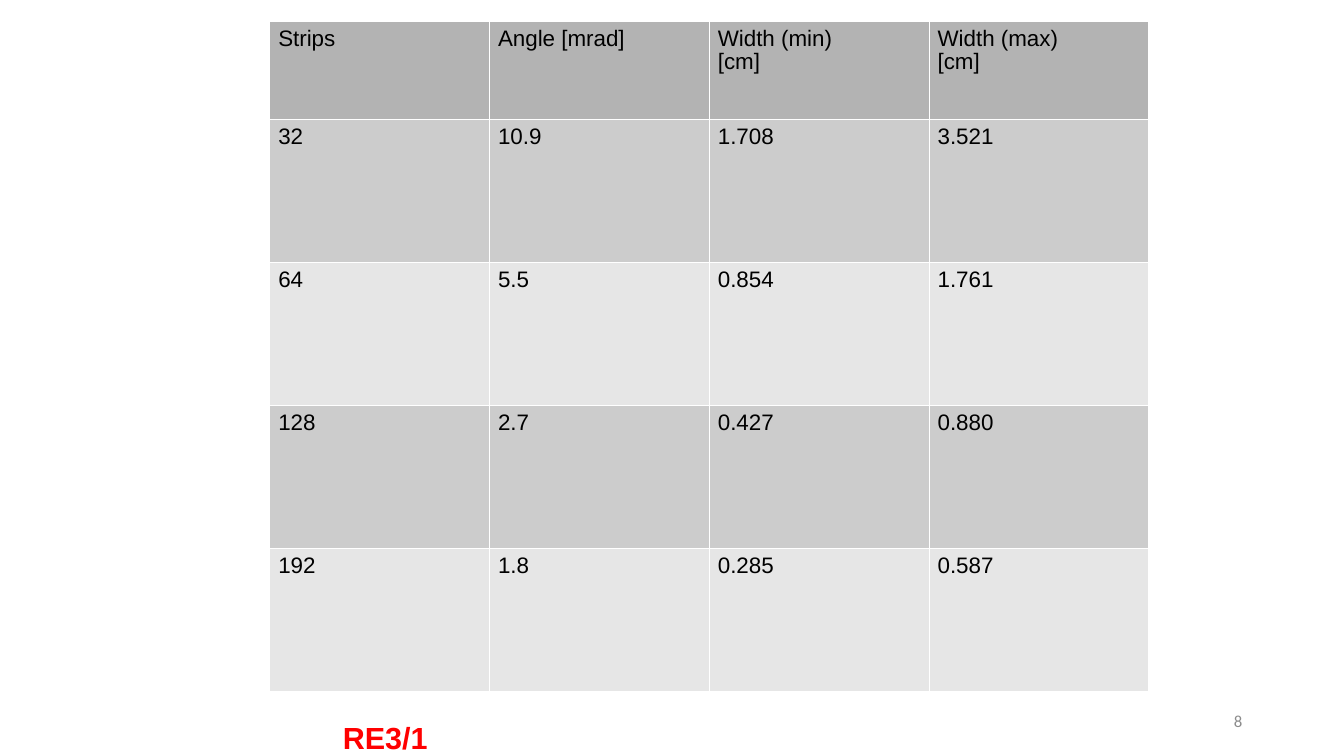
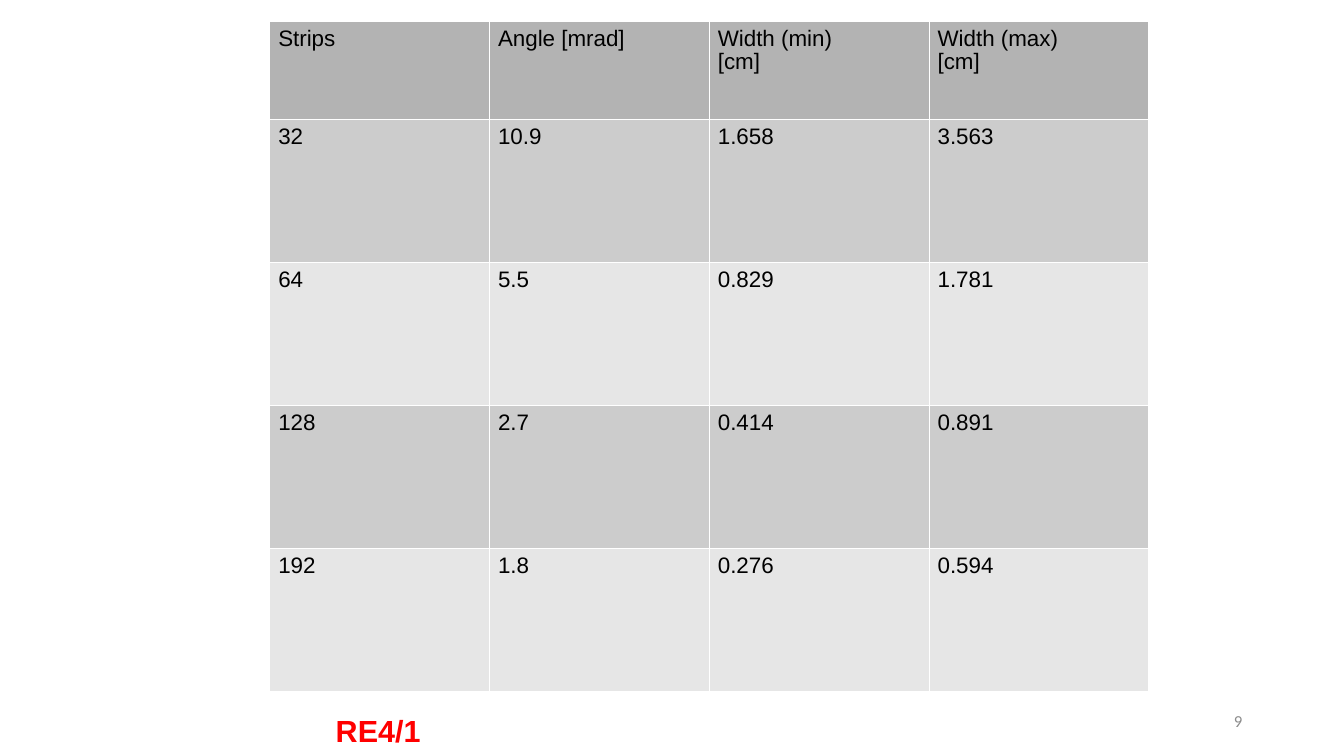
from dataclasses import dataclass

from lxml.etree import SubElement
from pptx import Presentation
from pptx.dml.color import RGBColor
from pptx.enum.text import MSO_ANCHOR, PP_ALIGN
from pptx.oxml.ns import qn
from pptx.util import Inches, Pt


@dataclass(frozen=True)
class Theme:
    sans: str = "Arial"
    foot: str = "Calibri"
    ink: str = "000000"
    red: str = "FF0000"
    grey: str = "8C8C8C"
    head: str = "B3B3B3"
    bands: tuple = ("CCCCCC", "E6E6E6")
    rule: str = "FFFFFF"
    line: float = 0.06
    body: float = 16
    label: float = 21.8
    small: float = 12
    space: float = 0.89


THEME = Theme()
HEADS = ("Strips", "Angle [mrad]", "Width (min)\n[cm]", "Width (max)\n[cm]")
STRIPS = ("32", "64", "128", "192")
ANGLES = ("10.9", "5.5", "2.7", "1.8")
PAGES = (
    {
        "page": "8",
        "name": "RE3/1",
        "spot": (3.31, 7.07),
        "least": ("1.708", "0.854", "0.427", "0.285"),
        "most": ("3.521", "1.761", "0.880", "0.587"),
    },
    {
        "page": "9",
        "name": "RE4/1",
        "spot": (3.24, 7),
        "least": ("1.658", "0.829", "0.414", "0.276"),
        "most": ("3.563", "1.781", "0.891", "0.594"),
    },
)


def add_run(para, text, font, size, color, bold=False):
    run = para.add_run()
    run.text = text
    run.font.name = font
    run.font.size = Pt(size)
    run.font.bold = bold
    run.font.color.rgb = RGBColor.from_string(color)


def pad(item, left, top, right, bottom):
    item.margin_left, item.margin_top = Inches(left), Inches(top)
    item.margin_right, item.margin_bottom = Inches(right), Inches(bottom)


def add_rules(cell):
    props = cell._tc.get_or_add_tcPr()
    for place, side in enumerate(("lnL", "lnR", "lnT", "lnB")):
        line = props.makeelement(qn(f"a:{side}"), {"w": str(Pt(THEME.line))})
        fill = SubElement(line, qn("a:solidFill"))
        SubElement(fill, qn("a:srgbClr"), val=THEME.rule)
        props.insert(place, line)


def fill_cell(cell, text, color):
    cell.fill.solid()
    cell.fill.fore_color.rgb = RGBColor.from_string(color)
    pad(cell, 0.09, 0.08, 0.09, 0.05)
    add_rules(cell)
    frame = cell.text_frame
    for count, words in enumerate(text.split("\n")):
        para = frame.add_paragraph() if count else frame.paragraphs[0]
        para.line_spacing = THEME.space
        add_run(para, words, THEME.sans, THEME.body, THEME.ink)


def add_grid(slide, rows):
    frame = slide.shapes.add_table(
        len(rows), len(HEADS), Inches(2.67), Inches(0.21), Inches(8.72), Inches(6.64)
    )
    table = frame.table
    table.first_row = False
    table.horz_banding = False
    for col in table.columns:
        col.width = Inches(2.18)
    for count, texts in enumerate(rows):
        table.rows[count].height = Inches(1.42 if count else 0.97)
        color = THEME.bands[(count - 1) % 2] if count else THEME.head
        for col, text in enumerate(texts):
            fill_cell(table.cell(count, col), text, color)


def add_page(slide, text):
    box = slide.shapes.add_textbox(Inches(9.42), Inches(6.95), Inches(3), Inches(0.4))
    frame = box.text_frame
    frame.word_wrap = True
    frame.vertical_anchor = MSO_ANCHOR.MIDDLE
    para = frame.paragraphs[0]
    para.alignment = PP_ALIGN.RIGHT
    add_run(para, text, THEME.foot, THEME.small, THEME.grey)


def add_label(slide, text, left, top):
    box = slide.shapes.add_textbox(
        Inches(left), Inches(top), Inches(1.1), Inches(0.43)
    )
    frame = box.text_frame
    frame.word_wrap = False
    pad(frame, 0.09, 0.06, 0.09, 0.04)
    para = frame.paragraphs[0]
    para.alignment = PP_ALIGN.LEFT
    add_run(para, text, THEME.sans, THEME.label, THEME.red, True)


def main():
    deck = Presentation()
    deck.slide_width = Inches(13.33)
    deck.slide_height = Inches(7.5)
    blank = deck.slide_layouts.get_by_name("Blank")
    for data in PAGES:
        slide = deck.slides.add_slide(blank)
        add_page(slide, data["page"])
        rows = [HEADS, *zip(STRIPS, ANGLES, data["least"], data["most"])]
        add_grid(slide, rows)
        add_label(slide, data["name"], *data["spot"])
    deck.save("out.pptx")


if __name__ == "__main__":
    main()
